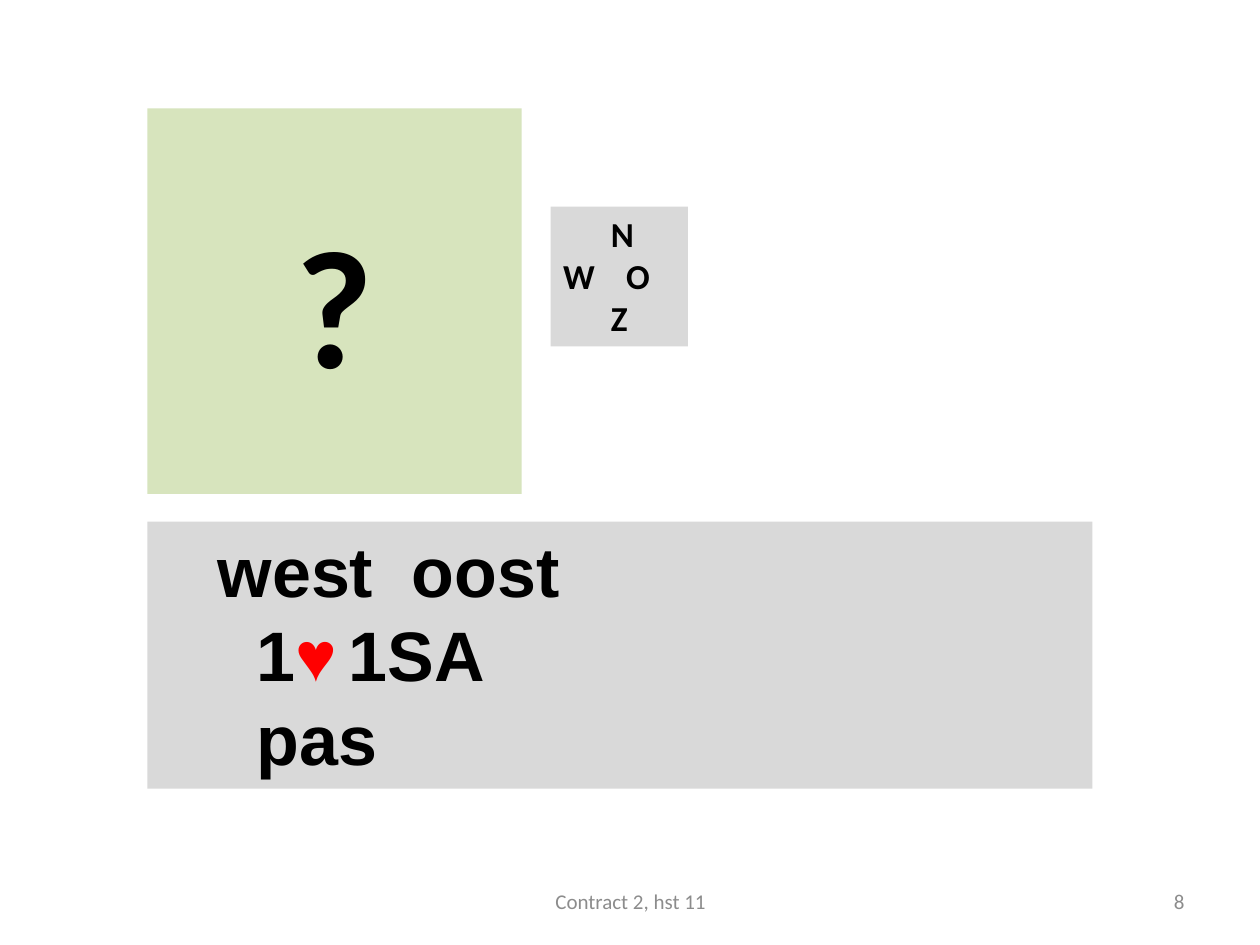
import pptx
import pptx.dml.color
import pptx.enum.shapes
import pptx.enum.text
import pptx.util
from lxml import etree
from pptx.oxml.ns import qn

Inches = pptx.util.Inches
Align = pptx.enum.text.PP_ALIGN
Anchor = pptx.enum.text.MSO_ANCHOR

COLORS = {
    "hand": "D7E4BD",
    "panel": "D9D9D9",
    "text": "000000",
    "heart": "FF0000",
    "footer": "8C8C8C",
}


class BridgeSlide:
    """Holds the colours and the slide that elements are added to."""

    def __init__(self, slide, colors):
        self.slide = slide
        self.colors = colors

    def color(self, name):
        return pptx.dml.color.RGBColor.from_string(self.colors[name])

    def panel(self, left, top, width, height, fill):
        shape = self.slide.shapes.add_shape(
            pptx.enum.shapes.MSO_SHAPE.RECTANGLE,
            Inches(left), Inches(top), Inches(width), Inches(height))
        shape.shadow.inherit = False
        shape.fill.solid()
        shape.fill.fore_color.rgb = self.color(fill)
        shape.line.fill.background()
        shape.text_frame.word_wrap = True
        shape.text_frame.vertical_anchor = Anchor.TOP
        return shape.text_frame

    def text_box(self, left, top, width, height):
        shape = self.slide.shapes.add_textbox(
            Inches(left), Inches(top), Inches(width), Inches(height))
        shape.text_frame.word_wrap = True
        shape.text_frame.vertical_anchor = Anchor.MIDDLE
        return shape.text_frame

    def add_lines(self, frame, lines, size, font="Calibri", bold=True,
                  align=Align.LEFT, tab=None):
        """Add lines given as (first-line indent, [(text, colour), ...])."""
        for index, (indent, runs) in enumerate(lines):
            paragraph = frame.add_paragraph() if index else frame.paragraphs[0]
            paragraph.alignment = align
            self.set_indent(paragraph, indent, tab)
            for text, color in runs:
                run = paragraph.add_run()
                run.text = text
                run.font.size = pptx.util.Pt(size)
                run.font.name = font
                run.font.bold = bold
                run.font.color.rgb = self.color(color)

    def set_indent(self, paragraph, indent, tab):
        properties = paragraph._p.get_or_add_pPr()
        properties.set("marL", "0")
        properties.set("indent", str(Inches(indent)))
        if tab:
            tab_list = etree.SubElement(properties, qn("a:tabLst"))
            etree.SubElement(tab_list, qn("a:tab"), pos=str(Inches(tab)), algn="l")


def main():
    presentation = pptx.Presentation()
    presentation.slide_width = Inches(10)
    presentation.slide_height = Inches(7.5)
    bridge = BridgeSlide(
        presentation.slides.add_slide(presentation.slide_layouts[6]), COLORS)

    hand = bridge.panel(1.17, 0.86, 2.97, 3.06, "hand")
    hand.margin_top = Inches(0.73)
    bridge.add_lines(hand, [(0, [("?", "text")])], 96, align=Align.CENTER)

    compass = bridge.panel(4.37, 1.64, 1.09, 1.11, "panel")
    bridge.add_lines(compass, [
        (0.38, [("N", "text")]),
        (0, [("W\tO", "text")]),
        (0.38, [("Z", "text")]),
    ], 20, tab=0.62)

    bidding = bridge.panel(1.17, 4.14, 7.5, 2.12, "panel")
    bridge.add_lines(bidding, [
        (0.46, [("west\toost", "text")]),
        (0.77, [("1", "text"), ("♥", "heart"), ("\t1SA", "text")]),
        (0.77, [("pas", "text")]),
    ], 40, font="Arial", tab=5)

    for left, width, text, align in (
            (7.17, 2.33, "8", Align.RIGHT),
            (3.42, 3.17, "Contract 2, hst 11", Align.CENTER)):
        footer = bridge.text_box(left, 6.95, width, 0.4)
        bridge.add_lines(footer, [(0, [(text, "footer")])], 12, bold=False,
                         align=align)

    presentation.save("out.pptx")


if __name__ == "__main__":
    main()
